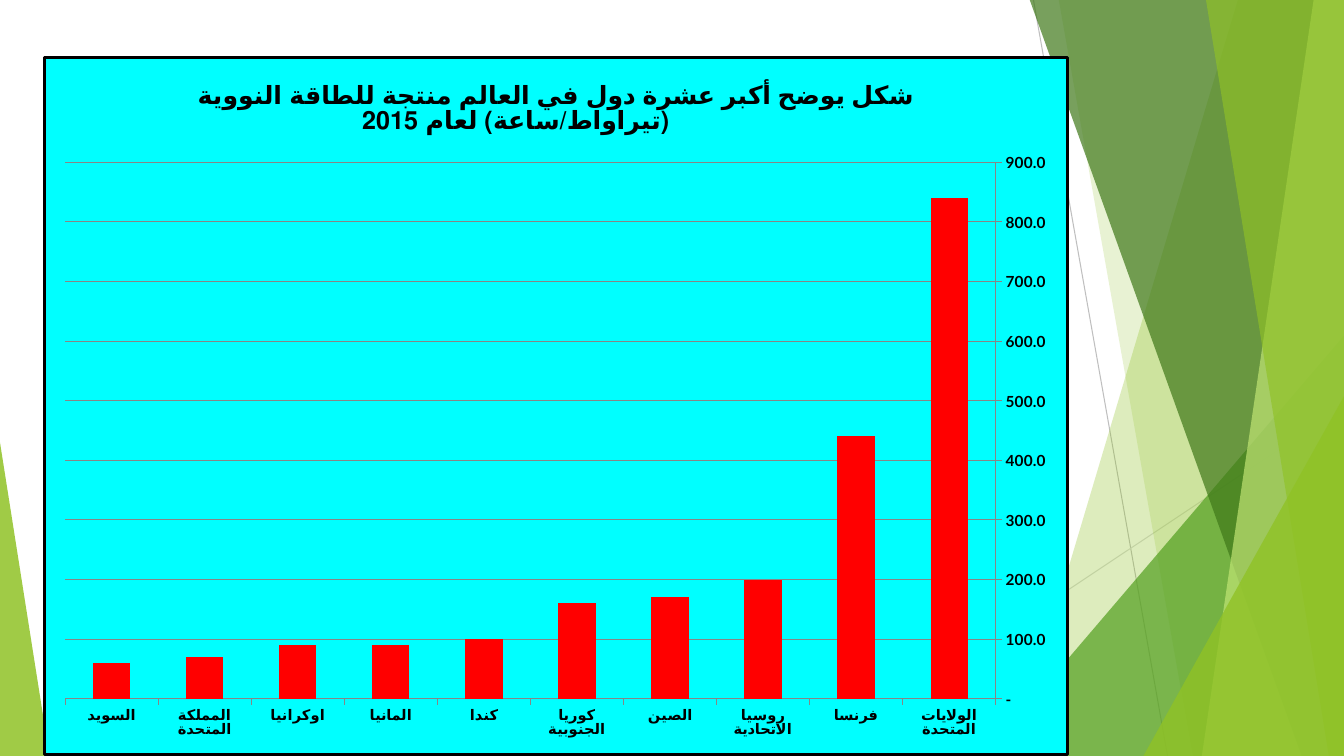
"""Build a slide with a column chart of the ten largest nuclear power producers."""
from dataclasses import dataclass

from lxml import etree
from pptx import Presentation
from pptx.chart.data import CategoryChartData
from pptx.dml.color import RGBColor
from pptx.enum.chart import XL_CHART_TYPE, XL_TICK_MARK
from pptx.enum.shapes import MSO_CONNECTOR, MSO_SHAPE
from pptx.oxml import parse_xml
from pptx.oxml.ns import qn
from pptx.util import Inches, Pt

COLUMN = XL_CHART_TYPE.COLUMN_CLUSTERED
OUT = XL_TICK_MARK.OUTSIDE
LINE = MSO_CONNECTOR.STRAIGHT
WEDGE = MSO_SHAPE.ISOSCELES_TRIANGLE
WIDE, HIGH = 13.33, 7.5
FONT = "Lato"
BLACK, GRAY, CYAN, RED = "000000", "868686", "00FFFF", "FF0000"
TITLE = "شكل يوضح أكبر عشرة دول في العالم منتجة للطاقة النووية (تيراواط/ساعة) لعام 2015"
POWER = {
    "الولايات المتحدة": 840, "فرنسا": 440, "روسيا الاتحادية": 200,
    "الصين": 170, "كوريا الجنوبية": 160, "كندا": 100, "المانيا": 90,
    "اوكرانيا": 90, "المملكة المتحدة": 70, "السويد": 60,
}
SPACES = ('xmlns:c="http://schemas.openxmlformats.org/drawingml/2006/chart" '
          'xmlns:a="http://schemas.openxmlformats.org/drawingml/2006/main"')


@dataclass
class Ray:
    start: tuple[float, float]
    end: tuple[float, float]
    color: str


@dataclass
class Band:
    top: float
    foot: float
    color: str
    alpha: int


@dataclass
class Peak:
    left: float
    top: float
    width: float
    tip: float
    color: str
    alpha: int


DECOR = [
    Ray((10.25, 0), (11.58, HIGH), "BFBFBF"),
    Ray((WIDE, 4.03), (8.12, HIGH), "D9D9D9"),
    Band(12.28, 10.04, "90C226", 30),
    Band(10.5, 11.83, "90C226", 20),
    Peak(9.77, 3.33, 3.56, 1, "54A021", 72),
    Band(10.21, 12.91, "3F7819", 70),
    Band(13.03, 11.92, "C0E474", 70),
    Band(11.96, 13.18, "90C226", 65),
    Peak(11.34, 3.93, 1.99, 1, "90C226", 80),
    Peak(0, 4.39, 0.49, 0, "90C226", 85),
]


def rgb(code: str) -> RGBColor:
    return RGBColor.from_string(code)


def tint(shape, color: str, alpha: int) -> None:
    shape.shadow.inherit = False
    shape.fill.solid()
    shape.fill.fore_color.rgb = rgb(color)
    shape.line.fill.background()
    hue = shape.element.spPr.find(".//" + qn("a:srgbClr"))
    etree.SubElement(hue, qn("a:alpha")).set("val", str(alpha * 1000))


def draw_ray(shapes, ray: Ray) -> None:
    line = shapes.add_connector(LINE, *map(Inches, ray.start + ray.end))
    line.line.color.rgb = rgb(ray.color)
    line.line.width = Pt(0.75)
    etree.SubElement(line.element.spPr, qn("a:effectLst"))


def draw_band(shapes, band: Band) -> None:
    spots = [(band.top, -0.01), (WIDE, -0.01), (WIDE, HIGH), (band.foot, HIGH)]
    first, *rest = [(Inches(x), Inches(y)) for x, y in spots]
    form = shapes.build_freeform(*first)
    form.add_line_segments(rest, close=True)
    tint(form.convert_to_shape(), band.color, band.alpha)


def draw_peak(shapes, peak: Peak) -> None:
    box = (peak.left, peak.top, peak.width, HIGH - peak.top)
    shape = shapes.add_shape(WEDGE, *map(Inches, box))
    shape.adjustments[0] = peak.tip
    tint(shape, peak.color, peak.alpha)


def style_axis(axis, size: float) -> None:
    axis.major_tick_mark = OUT
    axis.tick_labels.font.size = Pt(size)
    axis.tick_labels.font.bold = True
    axis.format.line.color.rgb = rgb(GRAY)


def style_title(chart) -> None:
    frame = chart.chart_title.text_frame
    frame.text = TITLE
    para = frame.paragraphs[0]
    para.font.size = Pt(18)
    para.font.bold = True
    para.element.pPr.set("rtl", "1") if hasattr(para, "element") else None
    font = para.runs[0].font
    font.size, font.bold, font.name = Pt(18), True, FONT
    font.color.rgb = rgb(BLACK)


def frame_chart(root) -> None:
    body = root.find(qn("c:chart"))
    body.addnext(parse_xml(
        f'<c:spPr {SPACES}><a:solidFill><a:srgbClr val="{CYAN}"/></a:solidFill>'
        f'<a:ln w="{Pt(2)}"><a:solidFill><a:srgbClr val="{BLACK}"/></a:solidFill>'
        '</a:ln></c:spPr>'))
    plot = body.find(qn("c:plotArea"))
    for old in plot.findall(qn("c:layout")):
        plot.remove(old)
    spots = {"x": 0.02, "y": 0.15, "w": 0.91, "h": 0.77}
    parts = "".join(f'<c:{key} val="{val}"/>' for key, val in spots.items())
    plot.insert(0, parse_xml(
        f'<c:layout {SPACES}><c:manualLayout><c:layoutTarget val="inner"/>'
        f'<c:xMode val="edge"/><c:yMode val="edge"/>{parts}'
        '</c:manualLayout></c:layout>'))


def draw_chart(shapes) -> None:
    data = CategoryChartData()
    data.categories = list(POWER)
    data.add_series("Series 1", list(POWER.values()))
    box = map(Inches, (0.43, 0.56, 10.17, 6.94))
    chart = shapes.add_chart(COLUMN, *box, data).chart
    chart.has_legend = False
    chart.font.name, chart.font.size = FONT, Pt(10)
    chart.font.color.rgb = rgb(BLACK)
    style_title(chart)
    plot = chart.plots[0]
    plot.gap_width, plot.vary_by_categories = 150, False
    fill = plot.series[0].format.fill
    fill.solid()
    fill.fore_color.rgb = rgb(RED)
    style_axis(chart.category_axis, 10.5)
    chart.category_axis.reverse_order = True
    axis = chart.value_axis
    style_axis(axis, 11)
    axis.minimum_scale, axis.maximum_scale, axis.major_unit = 0, 900, 100
    axis.major_gridlines.format.line.color.rgb = rgb(GRAY)
    axis.tick_labels.number_format = r"[>0.05]0.0;[=0]\-;\^"
    axis.tick_labels.number_format_is_linked = False
    frame_chart(chart.element)


def main() -> None:
    deck = Presentation()
    deck.slide_width, deck.slide_height = Inches(WIDE), Inches(HIGH)
    shapes = deck.slides.add_slide(deck.slide_layouts[6]).shapes
    draw = {Ray: draw_ray, Band: draw_band, Peak: draw_peak}
    for item in DECOR:
        draw[type(item)](shapes, item)
    draw_chart(shapes)
    deck.save("out.pptx")


if __name__ == "__main__":
    main()
